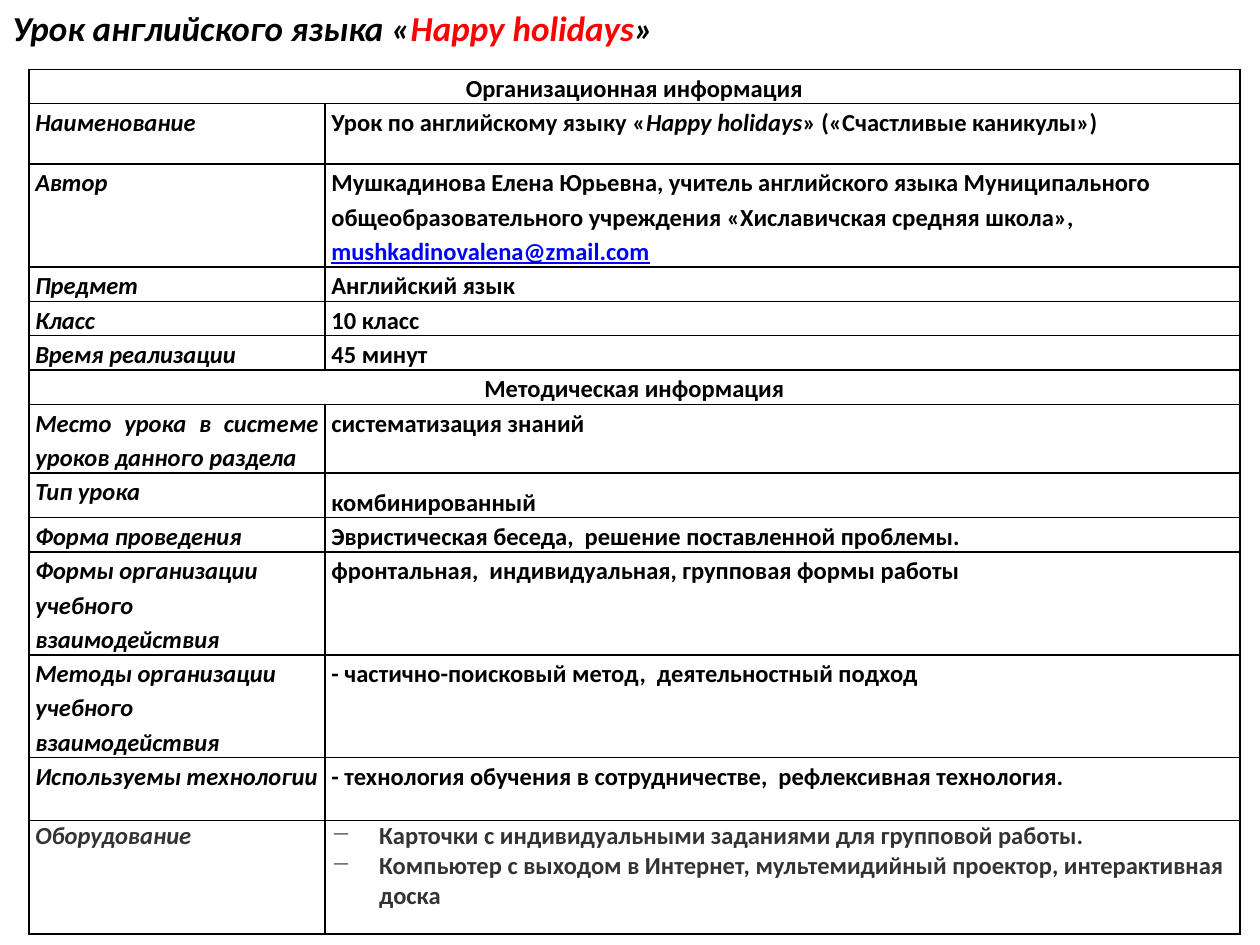
from lxml.etree import SubElement as Sub
from pptx import Presentation
from pptx.dml.color import RGBColor as RGB
from pptx.enum.text import MSO_ANCHOR as Anchor, PP_ALIGN as Align
from pptx.oxml.ns import qn
from pptx.util import Inches, Pt

HUES = {"ink": "000000", "paper": "FFFFFF", "red": "FF0000",
        "link": "0000FF", "gray": "333333"}
FACE = "Calibri"
LEFT, MID, JUST = Align.LEFT, Align.CENTER, Align.JUSTIFY
PLAIN, TALL, FIXED = 1.15, 1.5, Pt(17.2)

TITLE = [("Урок английского языка «", "ink"), ("Happy holidays", "red"), ("»", "ink")]
NAME = [("Урок по английскому языку «", {}), ("Happy holidays", {"italic": True}),
        ("» («Счастливые каникулы»)", {})]
AUTHOR = [("Мушкадинова Елена Юрьевна, учитель английского языка Муниципального "
           "общеобразовательного учреждения «Хиславичская средняя школа», ", {}),
          ("mushkadinovalena@zmail.com", {"underline": True, "hue": "link"})]
GEAR = ["Карточки с индивидуальными заданиями для групповой работы.",
        "Компьютер с выходом в Интернет, мультемидийный проектор, интерактивная доска"]

COLS = [2.35, 7.26]
ROWS = [
    (0.24, "Организационная информация", None),
    (0.48, "Наименование", NAME),
    (0.75, "Автор", AUTHOR),
    (0.24, "Предмет", "Английский язык"),
    (0.24, "Класс", "10 класс"),
    (0.24, "Время реализации", "45 минут"),
    (0.24, "Методическая информация", None),
    (0.5, "Место урока в системе уроков данного раздела", "систематизация знаний"),
    (0.3, "Тип урока", "комбинированный"),
    (0.24, "Форма проведения", "Эвристическая беседа,  решение поставленной проблемы."),
    (0.5, "Формы организации учебного взаимодействия",
     "фронтальная,  индивидуальная, групповая формы работы"),
    (0.5, "Методы организации учебного взаимодействия",
     "- частично-поисковый метод,  деятельностный подход"),
    (0.5, "Используемы технологии",
     "- технология обучения в сотрудничестве,  рефлексивная технология."),
    (0.9, "Оборудование", GEAR),
]
LAST = len(ROWS) - 1
ALIGNS = {(3, 1): JUST, (4, 1): JUST, (7, 0): JUST, (7, 1): JUST}
SPACES = {(8, 1): TALL, (LAST, 0): FIXED, (LAST, 1): FIXED}


def tint(font, hue):
    font.color.rgb = RGB.from_string(HUES[hue])


def set_font(para, size, italic):
    font = para.font
    font.name, font.size, font.bold, font.italic = FACE, Pt(size), True, italic


def add_runs(para, parts, base):
    for text, look in parts:
        run = para.add_run()
        run.text = text
        style = {"hue": base, **look}
        tint(run.font, style.pop("hue"))
        for key, val in style.items():
            setattr(run.font, key, val)


def add_dash(para):
    props = para._p.get_or_add_pPr()
    props.set("marL", str(Inches(0.38)))
    props.set("indent", str(-Inches(0.38)))
    mark = props.makeelement(qn("a:buChar"), {"char": "−"})
    spot = props.find(qn("a:defRPr"))
    spot.addprevious(mark)


def add_edges(cell):
    props = cell._tc.get_or_add_tcPr()
    for spot, side in enumerate(("lnL", "lnR", "lnT", "lnB")):
        line = props.makeelement(qn("a:" + side), {"w": str(Pt(1))})
        fill = Sub(line, qn("a:solidFill"))
        Sub(fill, qn("a:srgbClr"), val=HUES["ink"])
        props.insert(spot, line)


def dress(cell):
    cell.fill.solid()
    tint_fill = cell.fill.fore_color
    tint_fill.rgb = RGB.from_string(HUES["paper"])
    cell.margin_left = cell.margin_right = Inches(0.05)
    cell.margin_top = cell.margin_bottom = 0
    add_edges(cell)


def write(cell, paras, align, space, italic, hue):
    frame = cell.text_frame
    for n, parts in enumerate(paras):
        para = frame.add_paragraph() if n else frame.paragraphs[0]
        para.alignment, para.line_spacing = align, space
        set_font(para, 14, italic)
        add_runs(para, parts, hue)


def add_grid(slide):
    table = slide.shapes.add_table(
        len(ROWS), len(COLS), Inches(0.23), Inches(0.55), Inches(sum(COLS)),
        Inches(sum(row[0] for row in ROWS))).table
    table.first_row = table.horz_banding = False
    for col, width in zip(table.columns, COLS):
        col.width = Inches(width)
    for r, (height, label, value) in enumerate(ROWS):
        table.rows[r].height = Inches(height)
        pair = [table.cell(r, c) for c in range(len(COLS))]
        for cell in pair:
            dress(cell)
        head = value is None
        if head:
            pair[0].merge(pair[1])
        hue = "gray" if r == LAST else "ink"
        if value is GEAR:
            body = [[(text, {})] for text in GEAR]
        else:
            body = [[(value, {})] if isinstance(value, str) else value]
        texts = [[[(label, {})]]] + ([] if head else [body])
        for c, paras in enumerate(texts):
            align = MID if head else ALIGNS.get((r, c), LEFT)
            write(pair[c], paras, align, SPACES.get((r, c), PLAIN), c == 0 and not head, hue)
    table.cell(LAST, 0).text_frame.paragraphs[0].space_after = Pt(8.6)
    for para in table.cell(LAST, 1).text_frame.paragraphs:
        add_dash(para)


def add_title(slide):
    frame = slide.shapes.add_textbox(0, 0, Inches(9.77), Inches(0.44)).text_frame
    frame.word_wrap, frame.vertical_anchor = True, Anchor.MIDDLE
    para = frame.paragraphs[0]
    set_font(para, 20, True)
    add_runs(para, [(text, {"hue": hue}) for text, hue in TITLE], "ink")


def main():
    deck = Presentation()
    deck.slide_width, deck.slide_height = Inches(10), Inches(7.5)
    slide = deck.slides.add_slide(deck.slide_layouts[6])
    add_grid(slide)
    add_title(slide)
    deck.save("out.pptx")


if __name__ == "__main__":
    main()
